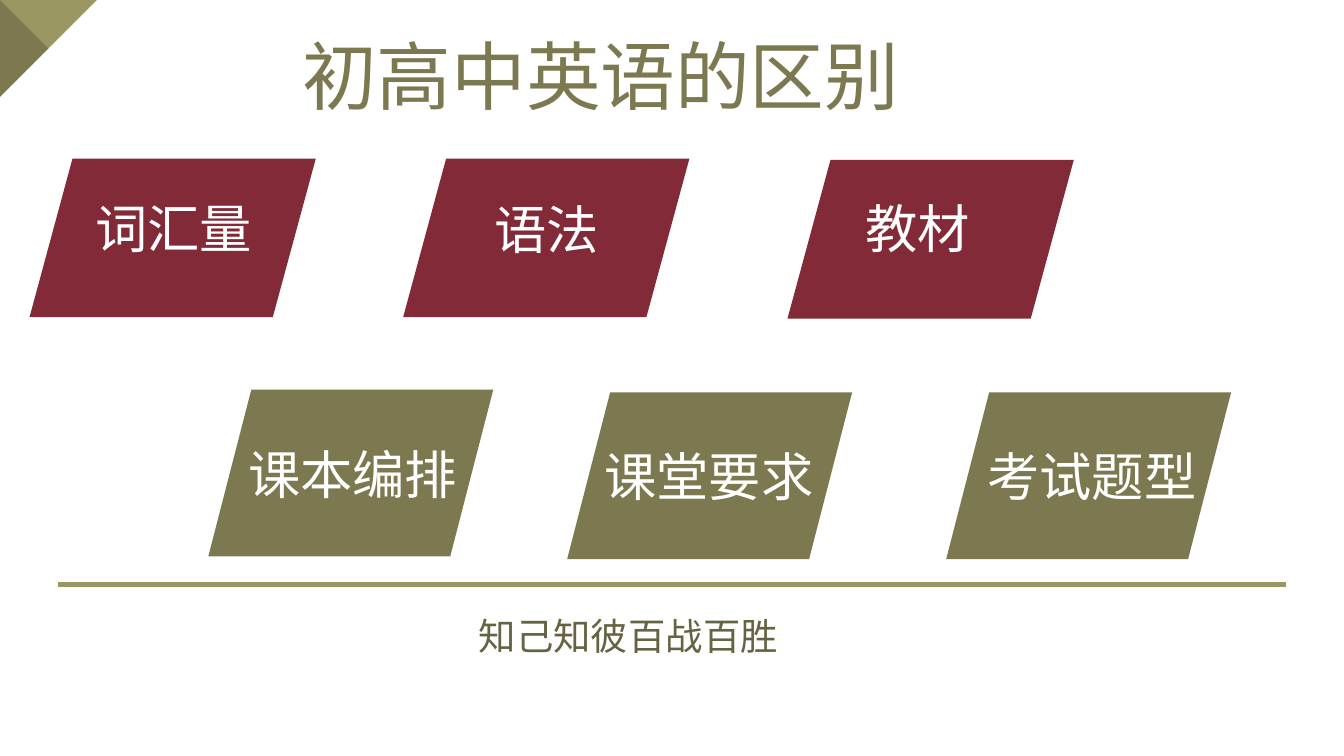
from lxml import etree
from pptx import Presentation
from pptx.dml.color import RGBColor
from pptx.enum.shapes import MSO_CONNECTOR, MSO_SHAPE
from pptx.enum.text import MSO_AUTO_SIZE, PP_ALIGN
from pptx.oxml.ns import qn
from pptx.util import Inches, Pt

PARALLELOGRAM = MSO_SHAPE.PARALLELOGRAM
RIGHT_TRIANGLE = MSO_SHAPE.RIGHT_TRIANGLE
STRAIGHT = MSO_CONNECTOR.STRAIGHT
GROW = MSO_AUTO_SIZE.SHAPE_TO_FIT_TEXT
LEFT, CENTER = PP_ALIGN.LEFT, PP_ALIGN.CENTER

FONT = "Noto Sans CJK SC"
OLIVE = RGBColor(0x7C, 0x79, 0x50)
LIGHT_OLIVE = RGBColor(0x9B, 0x97, 0x63)
DARK_OLIVE = RGBColor(0x66, 0x63, 0x42)
WINE = RGBColor(0x82, 0x2A, 0x37)
WHITE = RGBColor(0xFF, 0xFF, 0xFF)


def paint(shape, color):
    shape.shadow.inherit = False
    shape.fill.solid()
    shape.fill.fore_color.rgb = color
    shape.line.fill.background()


def add_text(text, box, size, color, **paragraph_format):
    frame = slide.shapes.add_textbox(*map(Inches, box)).text_frame
    frame.word_wrap = True
    frame.auto_size = GROW
    paragraph = frame.paragraphs[0]
    for name, value in paragraph_format.items():
        setattr(paragraph, name, value)
    run = paragraph.add_run()
    run.text = text
    for name, value in {"name": FONT, "size": Pt(size)}.items():
        setattr(run.font, name, value)
    run.font.color.rgb = color
    east_asian = etree.SubElement(run.font._element, qn("a:ea"))
    east_asian.set("typeface", FONT)


prs = Presentation()
prs.slide_width = Inches(10)
prs.slide_height = Inches(10) * 9 // 16
slide = prs.slides.add_slide(prs.slide_layouts[6])

corner = slide.shapes.add_shape(RIGHT_TRIANGLE, 0, 0, Inches(0.72), Inches(0.72))
corner.rotation = 90
paint(corner, LIGHT_OLIVE)

fold_outline = slide.shapes.build_freeform(0, 0)
fold_outline.add_line_segments(
    [(Inches(0.36), Inches(0.36)), (0, Inches(0.72))], close=True
)
paint(fold_outline.convert_to_shape(), OLIVE)

add_text("初高中英语的区别", (1.29, 0.17, 6.36, 0.77), 40, OLIVE, alignment=CENTER)

topics = [
    ("词汇量", WINE, (0.22, 1.18, 2.13, 1.18), (0.61, 1.41, 1.73)),
    ("语法", WINE, (3, 1.18, 2.13, 1.18), (3.58, 1.42, 1.93)),
    ("教材", WINE, (5.86, 1.19, 2.13, 1.18), (6.34, 1.41, 1.73)),
    ("课本编排", OLIVE, (1.55, 2.9, 2.12, 1.24), (1.75, 3.24, 2.1)),
    ("课堂要求", OLIVE, (4.22, 2.92, 2.12, 1.24), (4.4, 3.26, 2.1)),
    ("考试题型", OLIVE, (7.04, 2.92, 2.12, 1.24), (7.25, 3.26, 2.1)),
]
for topic, color, tile_box, label_box in topics:
    tile = slide.shapes.add_shape(PARALLELOGRAM, *map(Inches, tile_box))
    tile.adjustments[0] = 0.32 / tile_box[3]
    paint(tile, color)
    add_text(topic, (*label_box, 0.57), 28, WHITE, alignment=LEFT)

divider = slide.shapes.add_connector(
    STRAIGHT, Inches(0.43), Inches(4.35), Inches(9.57), Inches(4.35)
)
divider.line.color.rgb = LIGHT_OLIVE
divider.line.width = Pt(2.25)
etree.SubElement(divider._element.spPr, qn("a:effectLst"))

add_text(
    "知己知彼百战百胜", (1.82, 4.35, 5.71, 0.6), 20, DARK_OLIVE,
    alignment=CENTER, line_spacing=1.5,
)

prs.save("out.pptx")
